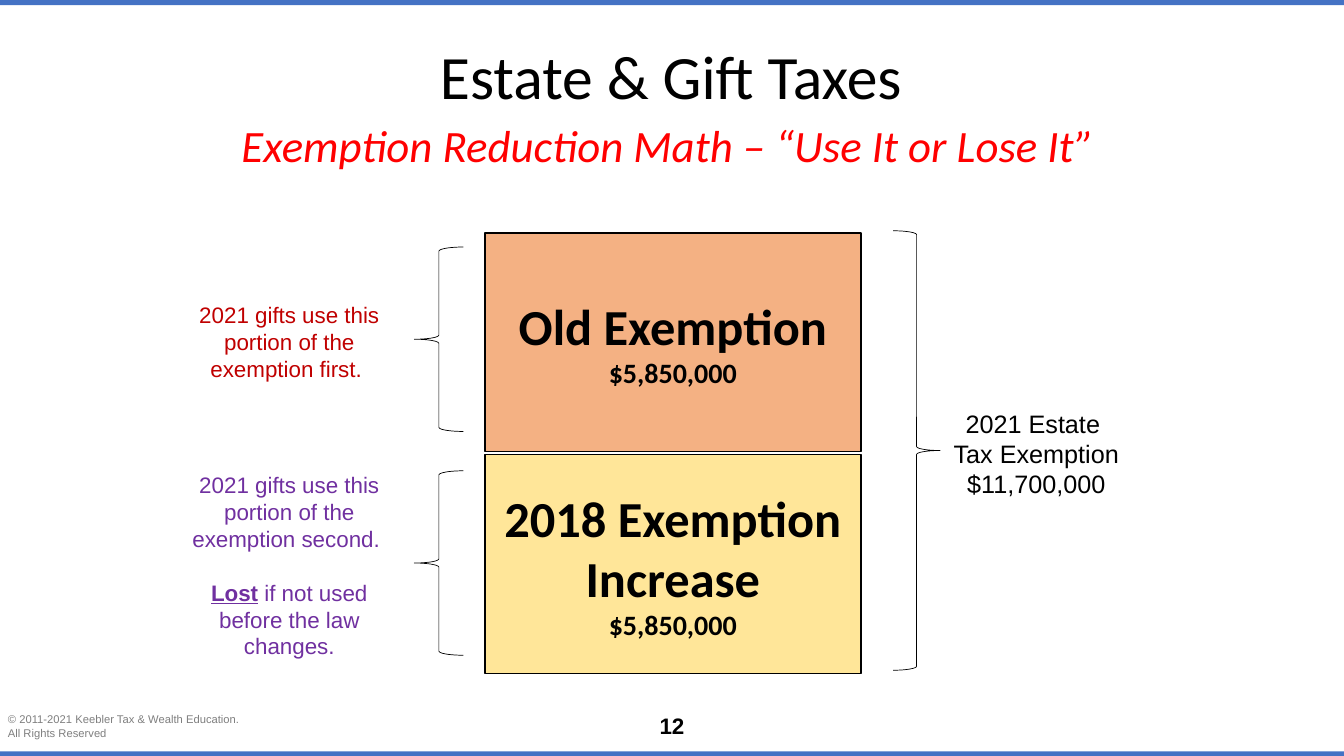
from pptx import Presentation
from pptx.dml.color import RGBColor
from pptx.enum.shapes import MSO_SHAPE
from pptx.enum.text import MSO_ANCHOR, PP_ALIGN
from pptx.util import Inches, Pt

BLUE, BLACK = "4472C4", "000000"
TITLE = "Estate & Gift Taxes"
MOTTO = "Exemption Reduction Math – “Use It or Lose It”"
RIGHTS = ["© 2011-2021 Keebler Tax & Wealth Education.", "All Rights Reserved"]
NUMBER = "12"
TOTAL = ["2021 Estate ", "Tax Exemption", "$11,700,000"]
PARTS = [
    ("Old Exemption", "$5,850,000", "F4B183"),
    ("2018 Exemption Increase", "$5,850,000", "FFE699"),
]
FIRST = ["2021 gifts use this portion of the exemption first. "]
SECOND = ["2021 gifts use this portion of the exemption second. "]
LOST = ("Lost", " if not used before the law changes.")

BOX = (36.08, 30.8, 27.98, 28.93)
BOX_STEP = 29.33
BRACE = (30.83, 32.67, 3.65, 24.4)
BRACE_STEP = 29.6
NOTE_X, NOTE_W = 12.45, 18.15

deck = Presentation()
deck.slide_width, deck.slide_height = Inches(13.33), Inches(7.5)
slide = deck.slides.add_slide(deck.slide_layouts[6])


def color(code):
    return RGBColor.from_string(code)


def place(x, y, w, h):
    wide, high = deck.slide_width / 100, deck.slide_height / 100
    return int(x * wide), int(y * high), int(w * wide), int(h * high)


def style(run, size, font="Arial", tint=BLACK, bold=False, italic=False, under=False):
    run.font.size, run.font.name = Pt(size), font
    run.font.color.rgb = color(tint)
    run.font.bold, run.font.italic, run.font.underline = bold, italic, under


def write(frame, lines, align=PP_ALIGN.CENTER, anchor=MSO_ANCHOR.TOP, **look):
    frame.word_wrap = True
    frame.vertical_anchor = anchor
    for i, line in enumerate(lines):
        para = frame.paragraphs[0] if i == 0 else frame.add_paragraph()
        para.alignment = align
        run = para.add_run()
        run.text = line
        style(run, **look)


def label(spot, lines, **look):
    frame = slide.shapes.add_textbox(*place(*spot)).text_frame
    write(frame, lines, **look)
    return frame


def draw(kind, spot, fill=None, line=None, width=1):
    shape = slide.shapes.add_shape(kind, *place(*spot))
    shape.shadow.inherit = False
    if fill:
        shape.fill.solid()
        shape.fill.fore_color.rgb = color(fill)
    else:
        shape.fill.background()
    if line:
        shape.line.color.rgb = color(line)
        shape.line.width = Pt(width)
    else:
        shape.line.fill.background()
    return shape


def brace(spot, turn=0):
    draw(MSO_SHAPE.RIGHT_BRACE, spot, line=BLACK, width=0.5).rotation = turn


label((-0.15, 93.6, 19.1, 4.93), RIGHTS, align=PP_ALIGN.LEFT, size=8, tint="7F7F7F")
label((47.2, 93.6, 5.6, 4.93), [NUMBER], size=16, bold=True)
for top in (0, 99.4):
    draw(MSO_SHAPE.RECTANGLE, (0, top, 100, 0.67), fill=BLUE)

for i, (name, value, fill) in enumerate(PARTS):
    x, y, w, h = BOX
    box = draw(MSO_SHAPE.RECTANGLE, (x, y + i * BOX_STEP, w, h), fill, BLACK)
    write(box.text_frame, [name, value], anchor=MSO_ANCHOR.MIDDLE,
          size=36, font="Calibri", bold=True)
    box.text_frame.paragraphs[1].runs[0].font.size = Pt(20)
    x, y, w, h = BRACE
    brace((x, y + i * BRACE_STEP, w, h), 180)

brace((66.45, 30.53, 3.5, 58.13))
label((69.98, 53.33, 14.25, 13.47), TOTAL, size=18)

label((NOTE_X, 39.2, NOTE_W, 12.13), FIRST, size=16, tint="C00000")
note = label((NOTE_X, 61.73, NOTE_W, 26.53), SECOND, size=16, tint="7030A0")
para = note.add_paragraph()
para.alignment = PP_ALIGN.CENTER
para.space_before = Pt(19)
for text, strong in zip(LOST, (True, False)):
    run = para.add_run()
    run.text = text
    style(run, 16, tint="7030A0", bold=strong, under=strong)

label((17.6, 0.27, 64.65, 19.33), [TITLE], anchor=MSO_ANCHOR.MIDDLE,
      size=44, font="Calibri")
motto = label((14.4, 9.87, 70.65, 19.33), [MOTTO], anchor=MSO_ANCHOR.MIDDLE,
              size=32, font="Calibri", tint="FF0000", italic=True)
motto.paragraphs[0].line_spacing = 0.9

deck.save("out.pptx")
